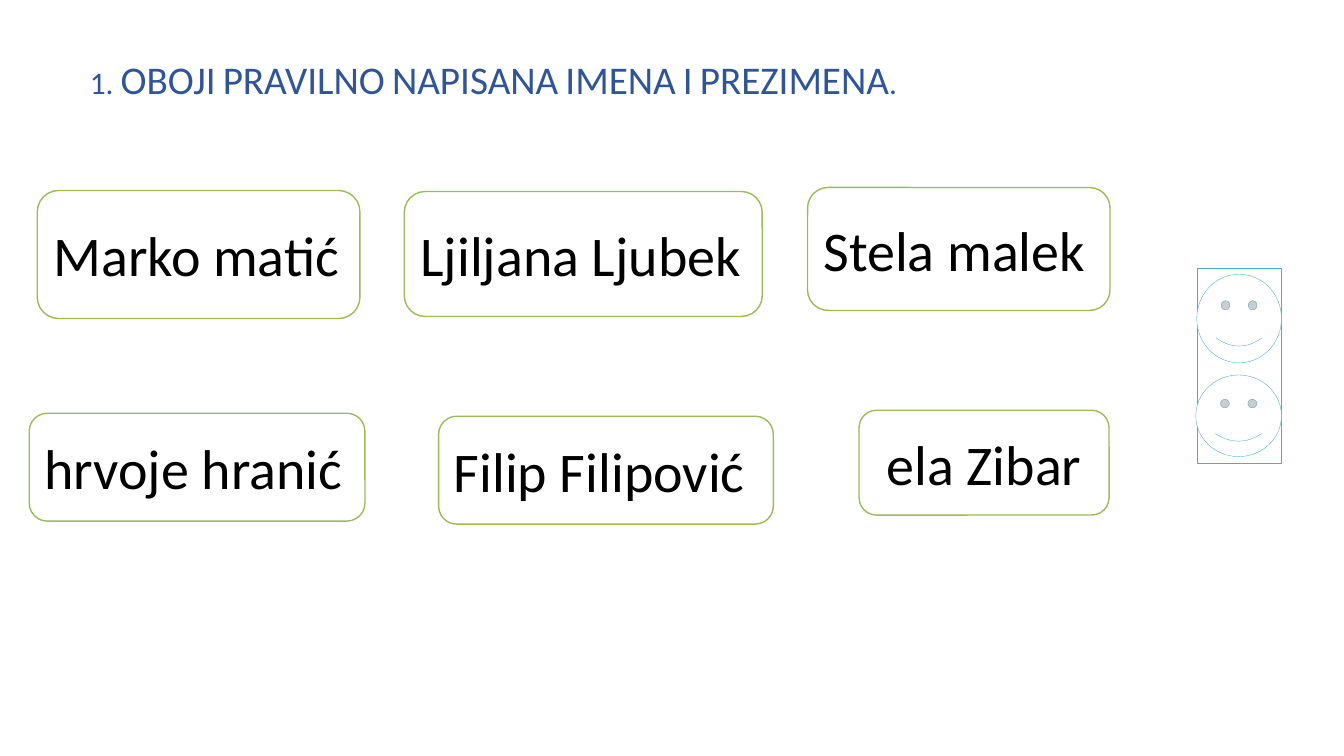
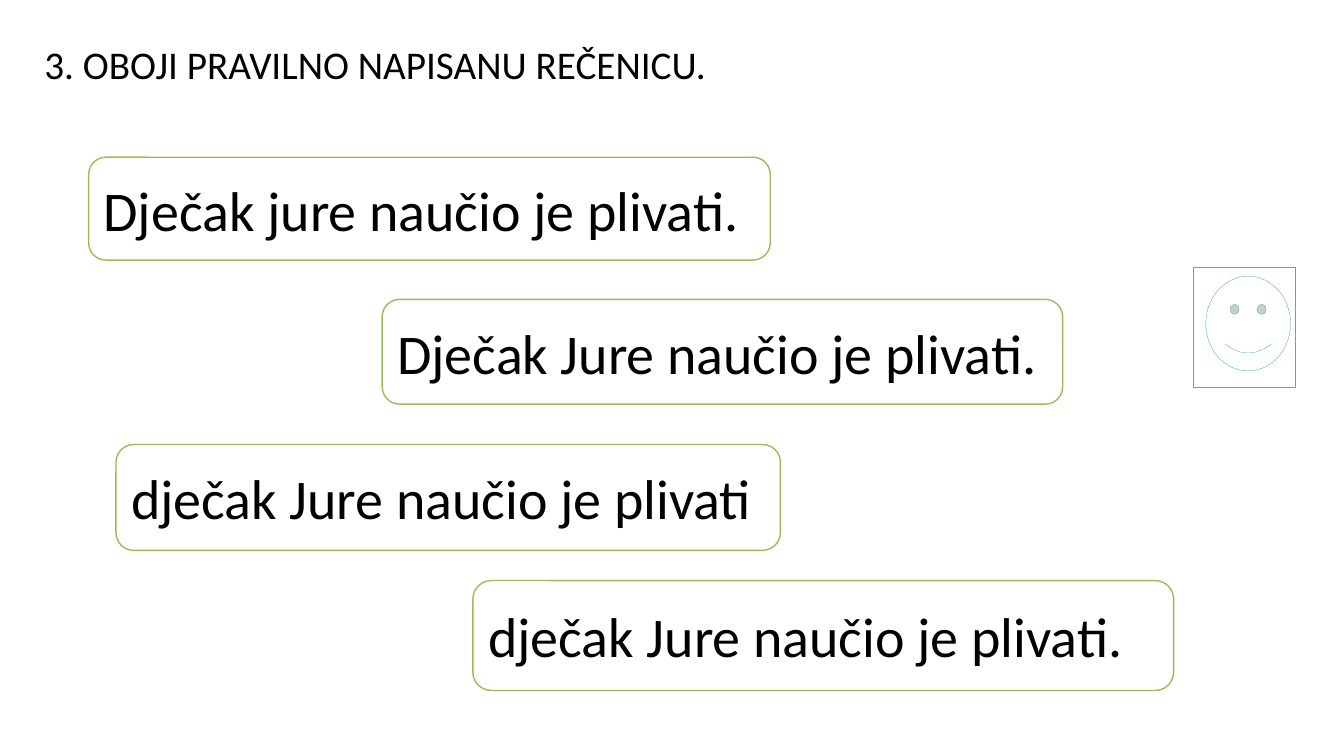
from dataclasses import dataclass

from pptx import Presentation
from pptx.dml.color import RGBColor
from pptx.enum import shapes, text
from pptx.util import Inches, Pt

FONT = "Calibri"
WHITE, BLACK = "FFFFFF", "000000"
GREEN, TEAL, BLUE = "9BBB59", "4BACC6", "2F5597"
RECT = shapes.MSO_SHAPE.RECTANGLE
CARD = shapes.MSO_SHAPE.ROUNDED_RECTANGLE
SMILEY = shapes.MSO_SHAPE.SMILEY_FACE


@dataclass(frozen=True)
class Box:
    """A rectangle in inches."""
    left: float
    top: float
    width: float
    height: float

    def lengths(self) -> list:
        """Return the four measures as lengths."""
        return [Inches(n) for n in (self.left, self.top, self.width, self.height)]


@dataclass(frozen=True)
class Card:
    """An answer that pupils may colour in."""
    answer: str
    box: Box


@dataclass(frozen=True)
class Task:
    """One exercise slide."""
    title: str
    title_box: Box
    cards: list[Card]
    panel: Box
    smileys: list[Box]
    color: str = BLACK
    anchor: text.MSO_ANCHOR = text.MSO_ANCHOR.MIDDLE
    small_caps: bool = False


TASKS = [
    Task(
        "1. OBOJI PRAVILNO NAPISANA IMENA I PREZIMENA.",
        Box(0.79, 0.5, 9.39, 0.57),
        [
            Card("Marko matić", Box(0.37, 1.89, 3.2, 1.27)),
            Card("Ljiljana Ljubek", Box(4.01, 1.9, 3.55, 1.24)),
            Card("Stela malek", Box(8.01, 1.86, 3, 1.22)),
            Card("hrvoje hranić", Box(0.29, 4.1, 3.33, 1.07)),
            Card("Filip Filipović", Box(4.35, 4.13, 3.32, 1.07)),
            Card(" ela Zibar", Box(8.52, 4.07, 2.48, 1.04)),
        ],
        Box(11.87, 2.66, 0.84, 1.94),
        [Box(11.86, 3.72, 0.85, 0.81), Box(11.87, 2.72, 0.84, 0.88)],
        color=BLUE,
        anchor=text.MSO_ANCHOR.TOP,
        small_caps=True,
    ),
    Task(
        "3. OBOJI PRAVILNO NAPISANU REČENICU.",
        Box(0.34, 0.35, 8.21, 0.57),
        [
            Card("Dječak jure naučio je plivati.", Box(0.88, 1.56, 6.76, 1.02)),
            Card("Dječak Jure naučio je plivati.", Box(3.79, 2.97, 6.75, 1.04)),
            Card("dječak Jure naučio je plivati", Box(1.15, 4.41, 6.59, 1.05)),
            Card("dječak Jure naučio je plivati.", Box(4.69, 5.76, 6.95, 1.09)),
        ],
        Box(11.83, 2.65, 1.02, 1.19),
        [Box(11.96, 2.74, 0.84, 0.94)],
    ),
]


def rgb(color: str) -> RGBColor:
    """Turn a hex string into a colour."""
    return RGBColor.from_string(color)


def write(sp, words: str, *, size: float, color: str = BLACK,
          anchor=text.MSO_ANCHOR.MIDDLE, small_caps: bool = False) -> None:
    """Put one left-aligned, formatted line into a shape."""
    tf = sp.text_frame
    tf.word_wrap = True
    tf.auto_size = text.MSO_AUTO_SIZE.NONE
    tf.vertical_anchor = anchor
    p = tf.paragraphs[0]
    p.alignment = text.PP_ALIGN.LEFT
    r = p.add_run()
    r.text = words
    r.font.name = FONT
    r.font.size = Pt(size)
    r.font.color.rgb = rgb(color)
    if small_caps:
        r.font._element.set("cap", "small")


def add_outlined(slide, kind: shapes.MSO_SHAPE, box: Box, line: str, width: float):
    """Add a white shape with a coloured outline."""
    sp = slide.shapes.add_shape(kind, *box.lengths())
    sp.shadow.inherit = False
    sp.fill.solid()
    sp.fill.fore_color.rgb = rgb(WHITE)
    sp.line.color.rgb = rgb(line)
    sp.line.width = Pt(width)
    return sp


def add_task(prs, task: Task) -> None:
    """Add one exercise slide."""
    slide = prs.slides.add_slide(prs.slide_layouts[5])
    title = slide.shapes.title
    title.left, title.top, title.width, title.height = task.title_box.lengths()
    write(title, task.title, size=28, color=task.color, anchor=task.anchor,
          small_caps=task.small_caps)
    for card in task.cards:
        write(add_outlined(slide, CARD, card.box, GREEN, 1), card.answer, size=40)
    add_outlined(slide, RECT, task.panel, TEAL, 0.25)
    for box in task.smileys:
        add_outlined(slide, SMILEY, box, TEAL, 0.25)


def main() -> None:
    """Build and save the presentation."""
    prs = Presentation()
    prs.slide_width, prs.slide_height = Inches(13.33), Inches(7.5)
    for task in TASKS:
        add_task(prs, task)
    prs.save("out.pptx")


if __name__ == "__main__":
    main()
